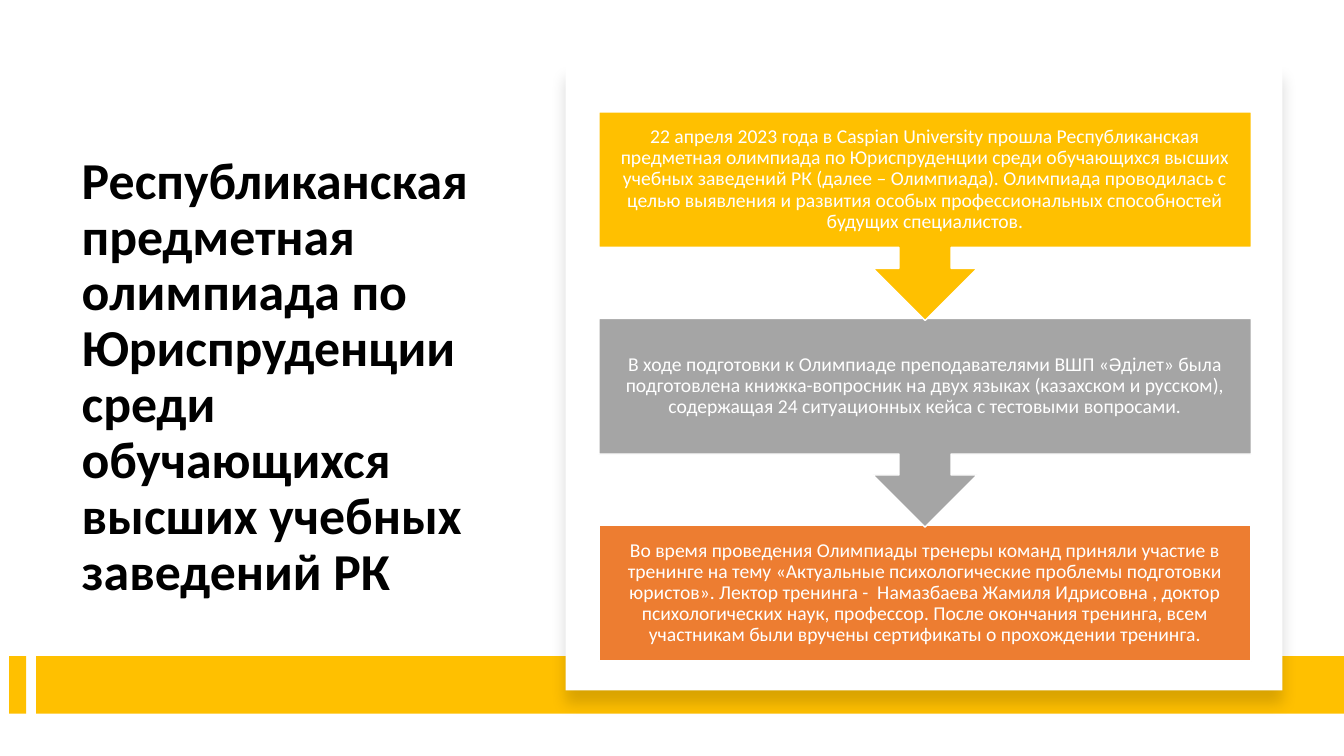
from lxml.etree import SubElement
from pptx import Presentation
from pptx.dml.color import RGBColor
from pptx.enum.shapes import MSO_SHAPE
from pptx.enum.text import MSO_ANCHOR, MSO_AUTO_SIZE, PP_ALIGN
from pptx.oxml.ns import qn
from pptx.util import Emu, Pt

EMU_PER_PX = 9144  # 100 px to the inch
FONT = "Calibri"
WHITE, BLACK, GOLD, GRAY, ORANGE = "FFFFFF", "000000", "FFC000", "A5A5A5", "ED7D31"

TITLE = ("Республиканская предметная олимпиада по Юриспруденции "
         "среди обучающихся высших учебных заведений РК")
STEP_LEFT, STEP_TOP, STEP_WIDTH, STEP_PITCH = 594, 111, 647, 205
CALLOUT_HEIGHT, LAST_HEIGHT = 207, 135
STEPS = [
    (GOLD, "22 апреля 2023 года в Caspian University прошла Республиканская "
           "предметная олимпиада по Юриспруденции среди обучающихся высших "
           "учебных заведений РК (далее – Олимпиада). Олимпиада проводилась с "
           "целью выявления и развития особых профессиональных способностей "
           "будущих специалистов."),
    (GRAY, "В ходе подготовки к Олимпиаде преподавателями ВШП «Әділет» была "
           "подготовлена книжка-вопросник на двух языках (казахском и русском), "
           "содержащая 24 ситуационных кейса с тестовыми вопросами."),
    (ORANGE, "Во время проведения Олимпиады тренеры команд приняли участие в "
             "тренинге на тему «Актуальные психологические проблемы подготовки "
             "юристов». Лектор тренинга -  Намазбаева Жамиля Идрисовна , доктор "
             "психологических наук, профессор. После окончания тренинга, всем "
             "участникам были вручены сертификаты о прохождении тренинга."),
]


def px(length):
    return Emu(length * EMU_PER_PX)


def color(hex_code):
    return RGBColor.from_string(hex_code)


def write(frame, text, size, font_color, bold=False, align=PP_ALIGN.LEFT):
    frame.word_wrap = True
    frame.auto_size = MSO_AUTO_SIZE.NONE
    frame.vertical_anchor = MSO_ANCHOR.MIDDLE
    frame.text = text
    paragraph = frame.paragraphs[0]
    paragraph.alignment = align
    paragraph.line_spacing = 0.9
    font = paragraph.font
    font.name, font.size, font.bold = FONT, Pt(size), bold
    font.color.rgb = color(font_color)


def add_block(slide, kind, left, top, width, height, fill):
    block = slide.shapes.add_shape(kind, px(left), px(top), px(width), px(height))
    block.shadow.inherit = False
    block.fill.solid()
    block.fill.fore_color.rgb = color(fill)
    block.line.fill.background()
    return block


def add_title(slide):
    title = slide.shapes.title
    title.left, title.top, title.width, title.height = map(px, (71, 120, 415, 510))
    write(title.text_frame, TITLE, 37, BLACK, bold=True)


def add_card(slide):
    card = add_block(slide, MSO_SHAPE.RECTANGLE, 561, 64, 711, 621, WHITE)
    # Soft shadow straight below the card
    effects = card._element.spPr.find(qn("a:effectLst"))
    shadow = SubElement(effects, qn("a:outerShdw"), blurRad=str(Pt(11)),
                        dist=str(Pt(10)), dir="5400000", algn="t", rotWithShape="0")
    tint = SubElement(shadow, qn("a:srgbClr"), val=BLACK)
    SubElement(tint, qn("a:alpha"), val="15000")


def add_step(slide, kind, top, height, fill, text):
    step = add_block(slide, kind, STEP_LEFT, top, STEP_WIDTH, height, fill)
    step.line.color.rgb = color(WHITE)
    step.line.width = Pt(1)
    frame = step.text_frame
    frame.margin_left = frame.margin_right = px(11)
    frame.margin_top = frame.margin_bottom = px(11)
    write(frame, text, 14, WHITE, align=PP_ALIGN.CENTER)


def main():
    prs = Presentation()
    prs.slide_width, prs.slide_height = px(1333), px(750)
    slide = prs.slides.add_slide(prs.slide_layouts[5])
    add_title(slide)

    # Gold band along the bottom
    for left, width in ((9, 17), (36, 1297)):
        add_block(slide, MSO_SHAPE.RECTANGLE, left, 651, width, 57, GOLD)

    add_card(slide)

    # Steps from the last to the first, so each arrow tip lies on the next box
    last = len(STEPS) - 1
    for index in range(last, -1, -1):
        fill, text = STEPS[index]
        if index == last:
            kind, height = MSO_SHAPE.RECTANGLE, LAST_HEIGHT
        else:
            kind, height = MSO_SHAPE.DOWN_ARROW_CALLOUT, CALLOUT_HEIGHT
        add_step(slide, kind, STEP_TOP + index * STEP_PITCH, height, fill, text)

    prs.save("out.pptx")


if __name__ == "__main__":
    main()
